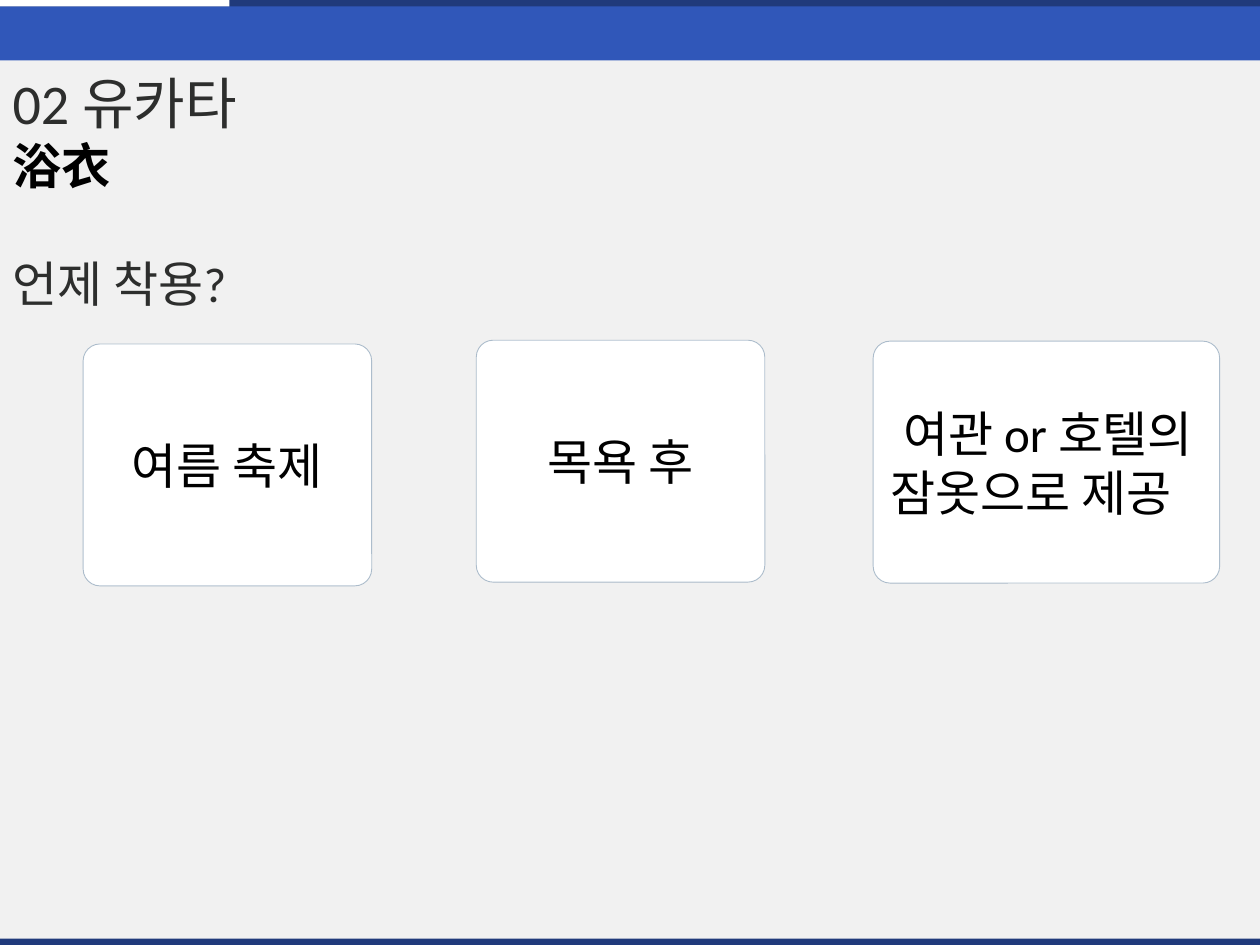
from dataclasses import dataclass

import pptx
import pptx.dml.color
import pptx.enum.shapes
import pptx.enum.text
import pptx.oxml
import pptx.oxml.ns
import pptx.util

ALIGN = pptx.enum.text.PP_ALIGN
ANCHOR = pptx.enum.text.MSO_ANCHOR
SHAPE = pptx.enum.shapes.MSO_SHAPE
WIDTH, HEIGHT = pptx.util.Inches(10), pptx.util.Inches(7.5)


@dataclass(frozen=True)
class Theme:
    font: str = "Calibri"
    backdrop: str = "F1F1F1"
    band: str = "3057B9"
    edge: str = "203A7B"
    white: str = "FFFFFF"
    outline: str = "1F4E79"
    ink: str = "2D2E2D"
    black: str = "000000"
    title_size: float = 32
    text_size: float = 28


THEME = Theme()


@dataclass(frozen=True)
class Area:
    """A rectangle given as shares of the slide's width and height."""
    left: float
    top: float
    width: float
    height: float

    def place(self) -> tuple[int, int, int, int]:
        return (round(self.left * WIDTH), round(self.top * HEIGHT),
                round(self.width * WIDTH), round(self.height * HEIGHT))


@dataclass(frozen=True)
class Card:
    text: str
    area: Area
    align: ALIGN = ALIGN.CENTER
    indent: float = 0


EDGE_HEIGHT = 0.0067
BACKDROP = Area(0, 0, 1, 1)
BAND = Area(0, 0.004, 1, 0.06)
TOP_EDGE = Area(0, 0, 1, EDGE_HEIGHT)
PROGRESS = Area(0, 0, 0.182, EDGE_HEIGHT)
BOTTOM_EDGE = Area(0, 1 - EDGE_HEIGHT, 1, EDGE_HEIGHT)
HEADING = Area(0, 0.0653, 0.513, 0.2707)
CARD_HEIGHT = 0.256
CARDS = [
    Card("여름 축제", Area(0.066, 0.364, 0.229, CARD_HEIGHT)),
    Card("여관 or 호텔의 잠옷으로 제공", Area(0.693, 0.361, 0.275, CARD_HEIGHT),
         ALIGN.LEFT, indent=0.1),
    Card("목욕 후", Area(0.378, 0.36, 0.229, CARD_HEIGHT)),
]


def rgb(color: str) -> pptx.dml.color.RGBColor:
    return pptx.dml.color.RGBColor.from_string(color)


def write(para, text: str, *, size: float = THEME.text_size, color: str = THEME.black,
          bold: bool = False, align: ALIGN = ALIGN.LEFT, before: float = 0) -> None:
    para.alignment = align
    para.space_before = pptx.util.Pt(before)
    span = para.add_run()
    span.text = text
    span.font.name = THEME.font
    span.font.size = pptx.util.Pt(size)
    span.font.bold = bold
    span.font.color.rgb = rgb(color)


def add_box(page, area: Area, fill: str, kind: SHAPE = SHAPE.RECTANGLE):
    box = page.shapes.add_shape(kind, *area.place())
    box.shadow.inherit = False
    box.fill.solid()
    box.fill.fore_color.rgb = rgb(fill)
    box.line.fill.background()
    return box


def add_heading(page) -> None:
    heading = page.shapes.title
    heading.left, heading.top, heading.width, heading.height = HEADING.place()
    # Bring the title in front of the backdrop.
    heading.element.getparent().append(heading.element)
    frame = heading.text_frame
    frame.word_wrap = True
    frame.auto_size = pptx.enum.text.MSO_AUTO_SIZE.NONE
    frame.vertical_anchor = ANCHOR.TOP
    write(frame.paragraphs[0], "02 유카타", size=THEME.title_size, color=THEME.ink)
    write(frame.add_paragraph(), "浴衣", bold=True)
    write(frame.add_paragraph(), "언제 착용?", color=THEME.ink, before=34)


def add_card(page, card: Card) -> None:
    box = add_box(page, card.area, THEME.white, SHAPE.ROUNDED_RECTANGLE)
    box.adjustments[0] = 0.07
    box.line.width = pptx.util.Pt(0.5)
    box.line.color.rgb = rgb(THEME.outline)
    tint = box.line._ln.find(".//" + pptx.oxml.ns.qn("a:srgbClr"))
    tint.append(pptx.oxml.parse_xml(
        f'<a:alpha {pptx.oxml.ns.nsdecls("a")} val="35000"/>'))
    frame = box.text_frame
    frame.word_wrap = True
    frame.vertical_anchor = ANCHOR.MIDDLE
    para = frame.paragraphs[0]
    write(para, card.text, align=card.align)
    if card.indent:
        para._p.get_or_add_pPr().set("indent", str(pptx.util.Inches(card.indent)))


def main() -> None:
    deck = pptx.Presentation()
    deck.slide_width, deck.slide_height = WIDTH, HEIGHT
    page = deck.slides.add_slide(deck.slide_layouts.get_by_name("Title Only"))
    for area, fill in ((BACKDROP, THEME.backdrop), (BAND, THEME.band),
                       (TOP_EDGE, THEME.edge), (PROGRESS, THEME.white)):
        add_box(page, area, fill)
    add_heading(page)
    add_box(page, BOTTOM_EDGE, THEME.edge)
    for card in CARDS:
        add_card(page, card)
    deck.save("out.pptx")


if __name__ == "__main__":
    main()
